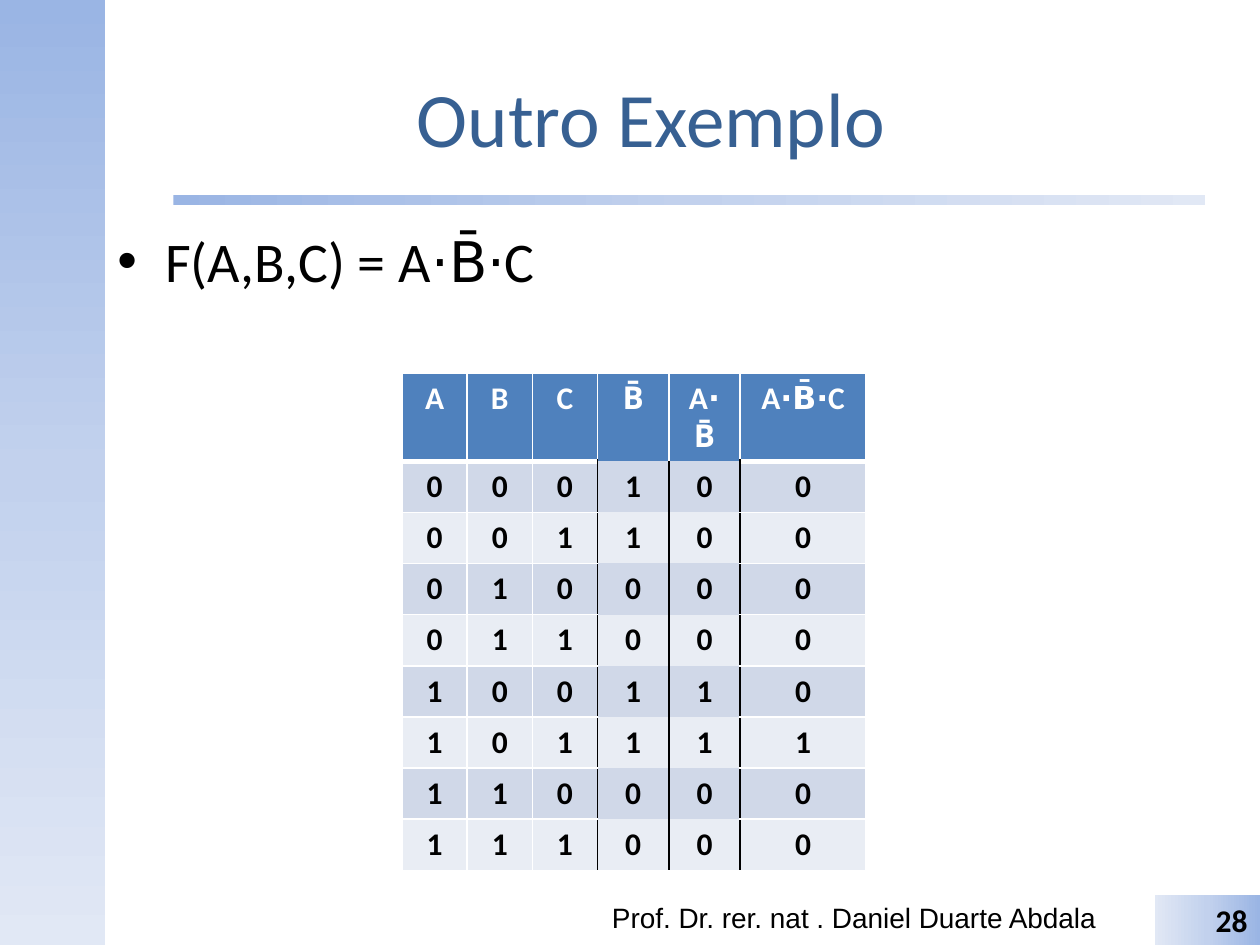
from copy import deepcopy
from itertools import product

from lxml.etree import SubElement
from pptx import Presentation
from pptx.dml.color import RGBColor
from pptx.enum.shapes import MSO_SHAPE as Preset
from pptx.enum.text import MSO_ANCHOR as Anchor, PP_ALIGN as Align
from pptx.oxml.ns import qn
from pptx.util import Inches, Pt

COLORS = {
    "title": "376092",
    "text": "000000",
    "white": "FFFFFF",
    "header": "4F81BD",
    "odd_row": "D0D8E8",
    "even_row": "E9EDF4",
}
GRADIENT = ((0, "9AB5E4"), (0.5, "C2D1ED"), (1, "E1E8F5"))
SIDES = {"left": "a:lnL", "right": "a:lnR", "top": "a:lnT", "bottom": "a:lnB"}
COLUMNS, ROWS = 12, 75


def color(name):
    return RGBColor.from_string(COLORS[name])


class SlideBuilder:
    """Places elements on a grid of 12 columns and 75 rows."""

    def __init__(self, presentation):
        self.column = presentation.slide_width / COLUMNS
        self.row = presentation.slide_height / ROWS
        self.slide = presentation.slides.add_slide(presentation.slide_layouts[6])

    def place(self, left, top, width, height):
        return (round(left * self.column), round(top * self.row),
                round(width * self.column), round(height * self.row))

    def add_text(self, frame, text, size, ink="text", font="Calibri",
                 bold=False, align=Align.LEFT):
        paragraph = frame.paragraphs[0]
        paragraph.alignment = align
        run = paragraph.add_run()
        run.text = text
        run.font.name = font
        run.font.size = Pt(size)
        run.font.bold = bold
        run.font.color.rgb = color(ink)
        return paragraph

    def textbox(self, area, text, size, anchor=Anchor.TOP, **style):
        frame = self.slide.shapes.add_textbox(*self.place(*area)).text_frame
        frame.word_wrap = True
        frame.vertical_anchor = anchor
        return self.add_text(frame, text, size, **style)

    def bullet(self, area, text, size):
        paragraph = self.textbox(area, text, size)
        paragraph.space_before = Pt(size * 0.2)
        properties = paragraph._p.get_or_add_pPr()
        properties.set("marL", str(Inches(0.38)))
        properties.set("indent", str(-Inches(0.38)))
        SubElement(properties, qn("a:buFont"), typeface="Arial")
        SubElement(properties, qn("a:buChar"), char="•")

    def gradient_bar(self, area, angle):
        """Draw a bar whose gradient runs at a counter-clockwise angle."""
        shape = self.slide.shapes.add_shape(Preset.RECTANGLE, *self.place(*area))
        shape.shadow.inherit = False
        shape.line.fill.background()
        shape.fill.gradient()
        shape.fill.gradient_angle = angle
        stop_list = shape._element.spPr.find(qn("a:gradFill")).find(qn("a:gsLst"))
        stop_list.append(deepcopy(stop_list[-1]))
        for stop, (position, shade) in zip(shape.fill.gradient_stops, GRADIENT):
            stop.position = position
            stop.color.rgb = RGBColor.from_string(shade)
        return shape

    def border(self, cell, side, ink, width):
        """Draw one cell edge, or none when ink is None."""
        line = SubElement(cell._tc.get_or_add_tcPr(), qn(SIDES[side]),
                          w=str(Pt(width)))
        if ink is None:
            SubElement(line, qn("a:noFill"))
        else:
            fill = SubElement(line, qn("a:solidFill"))
            SubElement(fill, qn("a:srgbClr"), val=COLORS[ink])

    def cell_borders(self, cell, row, column):
        """Rule the derived columns in black, the rest in white."""
        header = row == 0
        edge = None if column in (3, 4) else "white"
        left = "text" if not header and column >= 3 else "white"
        right = "text" if not header and 2 <= column <= 4 else "white"
        self.border(cell, "left", left, 1)
        self.border(cell, "right", right, 1)
        self.border(cell, "top", "white" if header else edge, 3 if row == 1 else 1)
        self.border(cell, "bottom", edge, 3 if header else 1)

    def table(self, left, top, widths, height, records):
        area = self.place(left, top, sum(widths), height * len(records))
        table = self.slide.shapes.add_table(len(records), len(widths), *area).table
        for column, width in zip(table.columns, widths):
            column.width = round(width * self.column)
        for row, record in enumerate(records):
            table.rows[row].height = round(height * self.row)
            band = "header" if row == 0 else "odd_row" if row % 2 else "even_row"
            for column, value in enumerate(record):
                cell = table.cell(row, column)
                self.add_text(cell.text_frame, str(value), 18, bold=True,
                              ink="text" if row else "white", align=Align.CENTER)
                self.cell_borders(cell, row, column)
                cell.fill.solid()
                cell.fill.fore_color.rgb = color(band)


def truth_table():
    records = [("A", "B", "C", "B̄", "A⋅B̄", "A⋅B̄⋅C")]
    for a, b, c in product((0, 1), repeat=3):
        not_b = 1 - b
        records.append((a, b, c, not_b, a * not_b, a * not_b * c))
    return records


def main():
    presentation = Presentation()
    presentation.slide_width = Inches(10)
    presentation.slide_height = Inches(7.5)
    builder = SlideBuilder(presentation)

    builder.gradient_bar((0, 0, 1, ROWS), angle=270)
    builder.gradient_bar((1.65, 15.5, 9.83, 0.8), angle=0)
    builder.textbox((1, 3, 10.4, 12.5), "Outro Exemplo", 44, anchor=Anchor.MIDDLE,
                    ink="title", align=Align.CENTER)
    builder.bullet((1, 17.5, 10.4, 49.5), "F(A,B,C) = A⋅B̄⋅C", 32)
    builder.textbox((5.71, 71, 5.03, 4), "Prof. Dr. rer. nat . Daniel Duarte Abdala",
                    16, font="Arial")
    number = builder.gradient_bar((11, 71, 1, 4), angle=180)
    number.text_frame.vertical_anchor = Anchor.MIDDLE
    builder.add_text(number.text_frame, "28", 18, bold=True, align=Align.RIGHT)
    builder.table(3.83, 29.6, [0.62] * 3 + [0.68] * 2 + [1.2], 4.06, truth_table())

    presentation.save("out.pptx")


if __name__ == "__main__":
    main()
